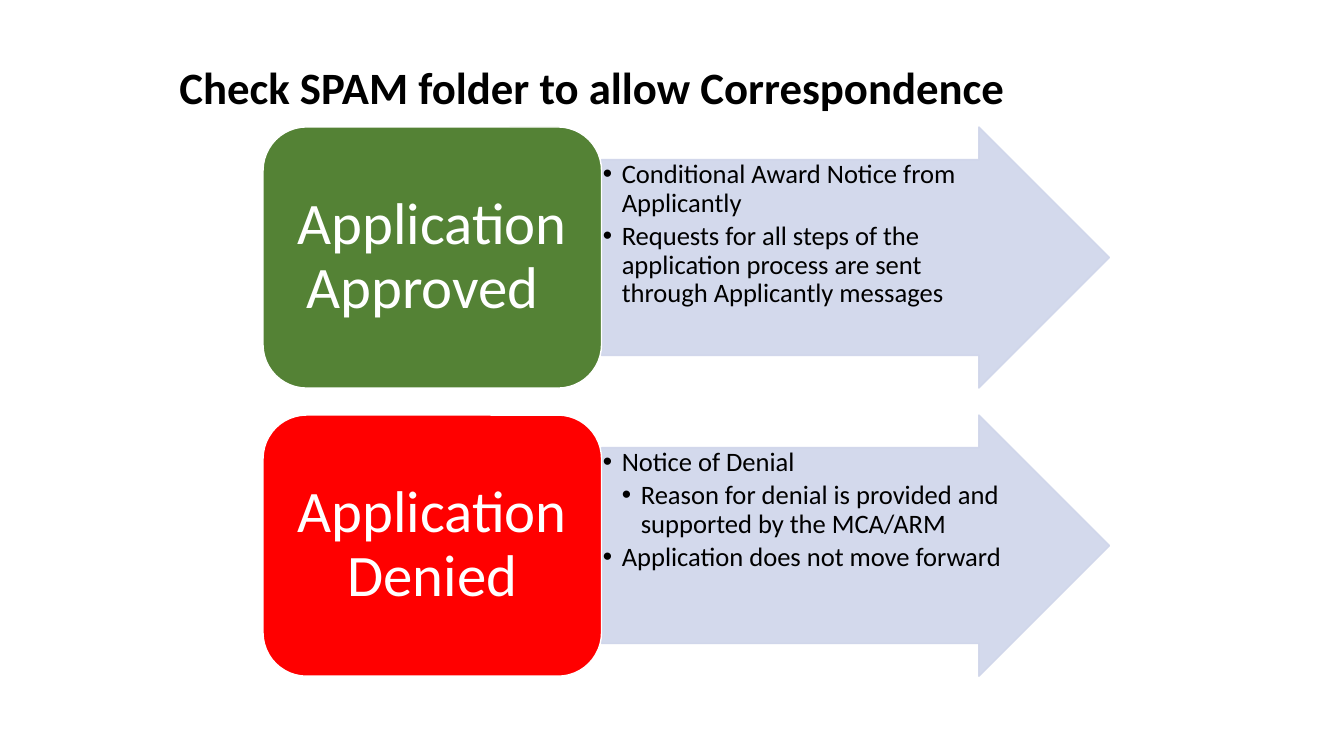
from dataclasses import dataclass

from lxml.etree import SubElement
from pptx import Presentation
from pptx.dml.color import RGBColor
from pptx.enum.shapes import MSO_SHAPE as ShapeKind
from pptx.enum.text import MSO_ANCHOR as Anchor, MSO_AUTO_SIZE as AutoSize, PP_ALIGN as Align
from pptx.oxml.ns import qn
from pptx.shapes.autoshape import Shape
from pptx.slide import Slide
from pptx.text.text import TextFrame, _Paragraph as Paragraph
from pptx.util import Cm, Pt

BLACK = RGBColor(0x00, 0x00, 0x00)
WHITE = RGBColor(0xFF, 0xFF, 0xFF)
GREEN = RGBColor(0x54, 0x82, 0x35)
RED = RGBColor(0xFF, 0x00, 0x00)
LAVENDER = RGBColor(0xCF, 0xD5, 0xEA)
FONT = "Calibri"
OPACITY = "90000"

BOX_LEFT = 6.63
BOX_WIDTH = 8.53
ARROW_LEFT = BOX_LEFT + BOX_WIDTH
ARROW_WIDTH = 12.8
FIRST_TOP = 3.2
ROW_HEIGHT = 6.58
ROW_STEP = 7.26
LIST_WIDTH = 10.34
LIST_HEIGHT = ROW_HEIGHT * 0.75
INDENT = 0.48


@dataclass(frozen=True)
class Bullet:
    text: str
    level: int = 0


@dataclass(frozen=True)
class Outcome:
    label: str
    color: RGBColor
    bullets: tuple[Bullet, ...]


OUTCOMES = (
    Outcome("Application Approved\t", GREEN, (
        Bullet("Conditional Award Notice from Applicantly"),
        Bullet("Requests for all steps of the application process "
               "are sent through Applicantly messages"),
    )),
    Outcome("Application Denied", RED, (
        Bullet("Notice of Denial"),
        Bullet("Reason for denial is provided and supported by the MCA/ARM", 1),
        Bullet("Application does not move forward"),
    )),
)


def place(shape: Shape, left: float, top: float, width: float, height: float) -> None:
    shape.left, shape.top = Cm(left), Cm(top)
    shape.width, shape.height = Cm(width), Cm(height)


def set_frame(frame: TextFrame, anchor: Anchor, side: float, edge: float) -> None:
    frame.word_wrap = True
    frame.auto_size = AutoSize.NONE
    frame.vertical_anchor = anchor
    frame.margin_left = frame.margin_right = Cm(side)
    frame.margin_top = frame.margin_bottom = Cm(edge)


def write(paragraph: Paragraph, text: str, size: float, color: RGBColor,
          align: Align = Align.LEFT, bold: bool = False) -> None:
    paragraph.alignment = align
    paragraph.space_before = Pt(0)
    run = paragraph.add_run()
    run.text = text
    run.font.name = FONT
    run.font.size = Pt(size)
    run.font.bold = bold
    run.font.color.rgb = color


def add_block(slide: Slide, kind: ShapeKind, left: float, top: float, width: float,
              fill: RGBColor, line: RGBColor) -> Shape:
    shape = slide.shapes.add_shape(kind, Cm(left), Cm(top), Cm(width), Cm(ROW_HEIGHT))
    shape.shadow.inherit = False
    shape.fill.solid()
    shape.fill.fore_color.rgb = fill
    shape.line.color.rgb = line
    shape.line.width = Pt(1)
    return shape


def add_arrow(slide: Slide, top: float) -> None:
    arrow = add_block(slide, ShapeKind.RIGHT_ARROW, ARROW_LEFT, top, ARROW_WIDTH,
                      LAVENDER, LAVENDER)
    arrow.adjustments[0] = 0.75
    arrow.adjustments[1] = 0.5
    for color in arrow._element.spPr.iter(qn("a:srgbClr")):
        SubElement(color, qn("a:alpha"), val=OPACITY)


def fill_list(body: Shape, top: float, bullets: tuple[Bullet, ...]) -> None:
    place(body, ARROW_LEFT, top + (ROW_HEIGHT - LIST_HEIGHT) / 2, LIST_WIDTH, LIST_HEIGHT)
    frame = body.text_frame
    set_frame(frame, Anchor.TOP, 0.03, 0.03)
    for index, bullet in enumerate(bullets):
        paragraph = frame.add_paragraph() if index else frame.paragraphs[0]
        paragraph.level = bullet.level
        paragraph.line_spacing = 0.9
        paragraph.space_after = Pt(2.85)
        write(paragraph, bullet.text, 19, BLACK)
        properties = paragraph._p.get_or_add_pPr()
        properties.set("marL", str(Cm(INDENT * (bullet.level + 1))))
        properties.set("indent", str(Cm(-INDENT)))
        SubElement(properties, qn("a:buFont"), typeface="Arial")
        SubElement(properties, qn("a:buChar"), char="•")


def add_label(slide: Slide, top: float, outcome: Outcome) -> None:
    box = add_block(slide, ShapeKind.ROUNDED_RECTANGLE, BOX_LEFT, top, BOX_WIDTH,
                    outcome.color, WHITE)
    set_frame(box.text_frame, Anchor.MIDDLE, 0.43, 0.22)
    paragraph = box.text_frame.paragraphs[0]
    paragraph.line_spacing = 0.9
    write(paragraph, outcome.label, 42, WHITE, Align.CENTER)


def main() -> None:
    presentation = Presentation()
    presentation.slide_width, presentation.slide_height = Cm(33.87), Cm(19.05)
    slide = presentation.slides.add_slide(
        presentation.slide_layouts.get_by_name("Two Content"))
    title, *bodies = [shape for shape in slide.placeholders
                      if shape.placeholder_format.idx < 3]

    place(title, 4.27, 1.37, 21.34, 1.63)
    set_frame(title.text_frame, Anchor.TOP, 0.25, 0.13)
    write(title.text_frame.paragraphs[0], "Check SPAM folder to allow Correspondence",
          32, BLACK, bold=True)

    for row, (outcome, body) in enumerate(zip(OUTCOMES, bodies)):
        top = FIRST_TOP + row * ROW_STEP
        add_arrow(slide, top)
        fill_list(body, top, outcome.bullets)
        slide.shapes._spTree.append(body._element)
        add_label(slide, top, outcome)

    presentation.save("out.pptx")


if __name__ == "__main__":
    main()
